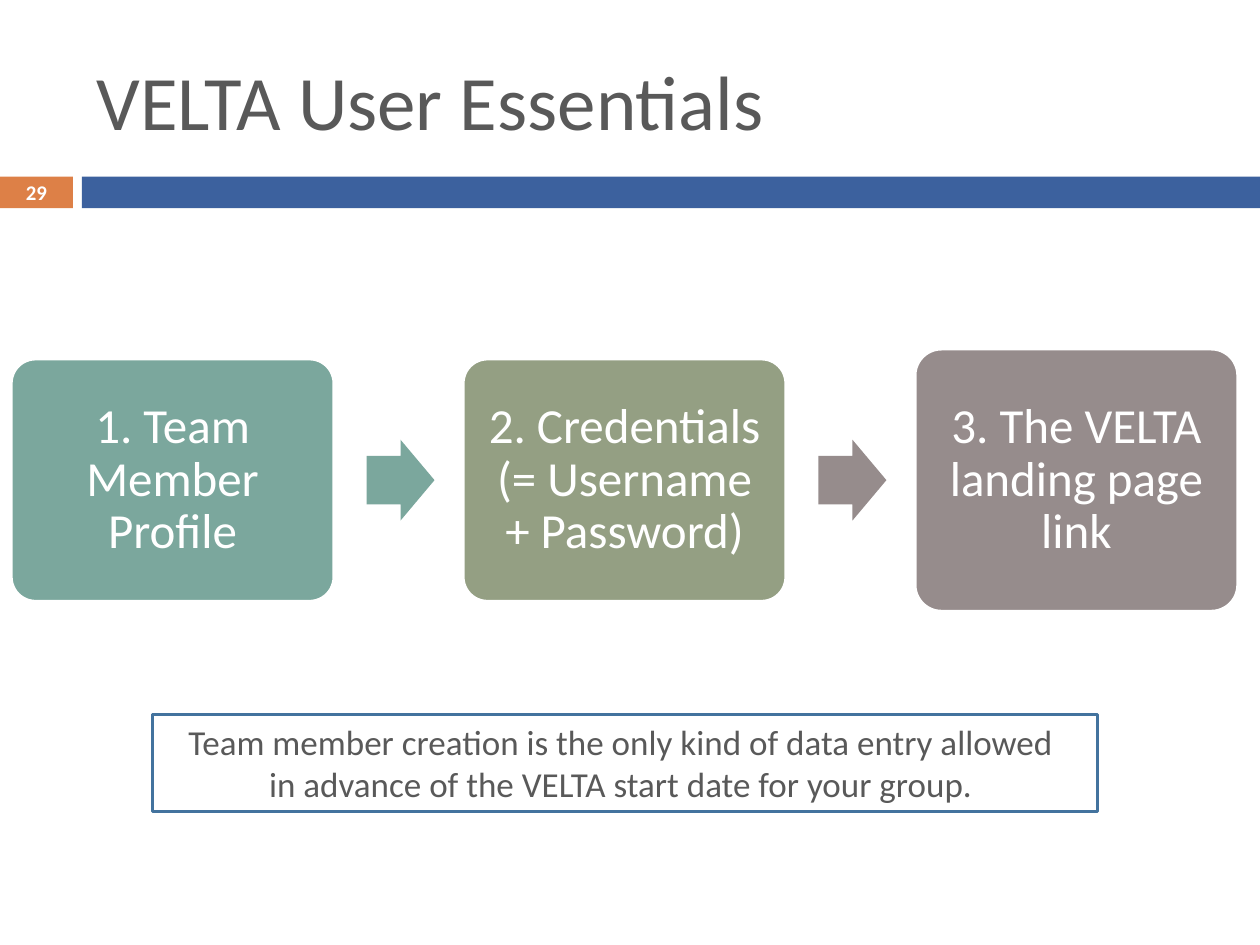
from pptx import Presentation
from pptx.dml.color import RGBColor
from pptx.enum.shapes import MSO_SHAPE
from pptx.enum.text import MSO_ANCHOR, PP_ALIGN
from pptx.util import Cm, Pt

RECT = MSO_SHAPE.RECTANGLE
ROUND = MSO_SHAPE.ROUNDED_RECTANGLE
ARROW = MSO_SHAPE.RIGHT_ARROW
MIDDLE = MSO_ANCHOR.MIDDLE
LEFT, CENTER = PP_ALIGN.LEFT, PP_ALIGN.CENTER

FONT = "Calibri"
GREY, WHITE = "595959", "FFFFFF"
ORANGE, BLUE, OUTLINE = "DD8047", "3C619E", "43739E"
TEAL, OLIVE, TAUPE = "7BA79D", "949F83", "968C8C"

TITLE = "VELTA User Essentials"
PAGE = "29"
STEPS = [
    ("1. Team Member Profile", TEAL, 4.88),
    ("2. Credentials (= Username + Password)", OLIVE, 4.88),
    ("3. The VELTA landing page link", TAUPE, 5.28),
]
ARROW_COLORS = [TEAL, TAUPE]
NOTE = [
    "Team member creation is the only kind of data entry allowed ",
    "in advance of the VELTA start date for your group. ",
]

STEP_LEFT, STEP_PITCH, STEP_W, STEP_MID = 0.23, 9.11, 6.5, 9.68
ARROW_OFFSET, ARROW_W, ARROW_H = 7.16, 1.37, 1.63


def color(value):
    return RGBColor.from_string(value)


def add_box(s, kind, left, top, width, height, fill=None, line=None):
    sp = s.shapes.add_shape(kind, Cm(left), Cm(top), Cm(width), Cm(height))
    sp.shadow.inherit = False
    if fill:
        sp.fill.solid()
        sp.fill.fore_color.rgb = color(fill)
    else:
        sp.fill.background()
    if line:
        sp.line.color.rgb = color(line)
        sp.line.width = Pt(1.5)
    else:
        sp.line.fill.background()
    return sp


def write(sp, lines, size, rgb, align=CENTER, bold=False, spacing=None):
    tf = sp.text_frame
    tf.word_wrap = True
    tf.vertical_anchor = MIDDLE
    tf.text = "\n".join(lines)
    for p in tf.paragraphs:
        p.alignment = align
        p.line_spacing = spacing
        for r in p.runs:
            r.font.name = FONT
            r.font.size = Pt(size)
            r.font.bold = bold
            r.font.color.rgb = color(rgb)
    return tf


def add_header(s):
    badge = add_box(s, RECT, 0, 3.56, 1.47, 0.64, ORANGE)
    tf = write(badge, [PAGE], 11.9, WHITE, bold=True)
    tf.margin_top = tf.margin_bottom = 0
    add_box(s, RECT, 1.65, 3.56, 23.75, 0.64, BLUE)
    title = s.shapes.add_textbox(Cm(1.7), Cm(0.64), Cm(22.66), Cm(2.74))
    write(title, [TITLE], 44, GREY, LEFT)


def add_steps(s):
    for i, (text, fill, height) in enumerate(STEPS):
        left = STEP_LEFT + i * STEP_PITCH
        card = add_box(s, ROUND, left, STEP_MID - height / 2, STEP_W, height, fill, WHITE)
        card.adjustments[0] = 0.1
        tf = write(card, [text], 28, WHITE, spacing=0.9)
        tf.margin_left = tf.margin_right = Cm(0.3)
        tf.margin_top = tf.margin_bottom = Cm(0.3)
    for i, fill in enumerate(ARROW_COLORS):
        left = STEP_LEFT + i * STEP_PITCH + ARROW_OFFSET
        arrow = add_box(s, ARROW, left, STEP_MID - ARROW_H / 2, ARROW_W, ARROW_H, fill)
        arrow.adjustments[0] = 0.6
        arrow.adjustments[1] = 0.5


def main():
    prs = Presentation()
    prs.slide_width, prs.slide_height = Cm(25.4), Cm(19.05)
    s = prs.slides.add_slide(prs.slide_layouts[6])
    add_header(s)
    add_steps(s)
    note = add_box(s, RECT, 3.07, 14.4, 19.05, 1.96, line=OUTLINE)
    write(note, NOTE, 20, GREY)
    prs.save("out.pptx")


if __name__ == "__main__":
    main()
